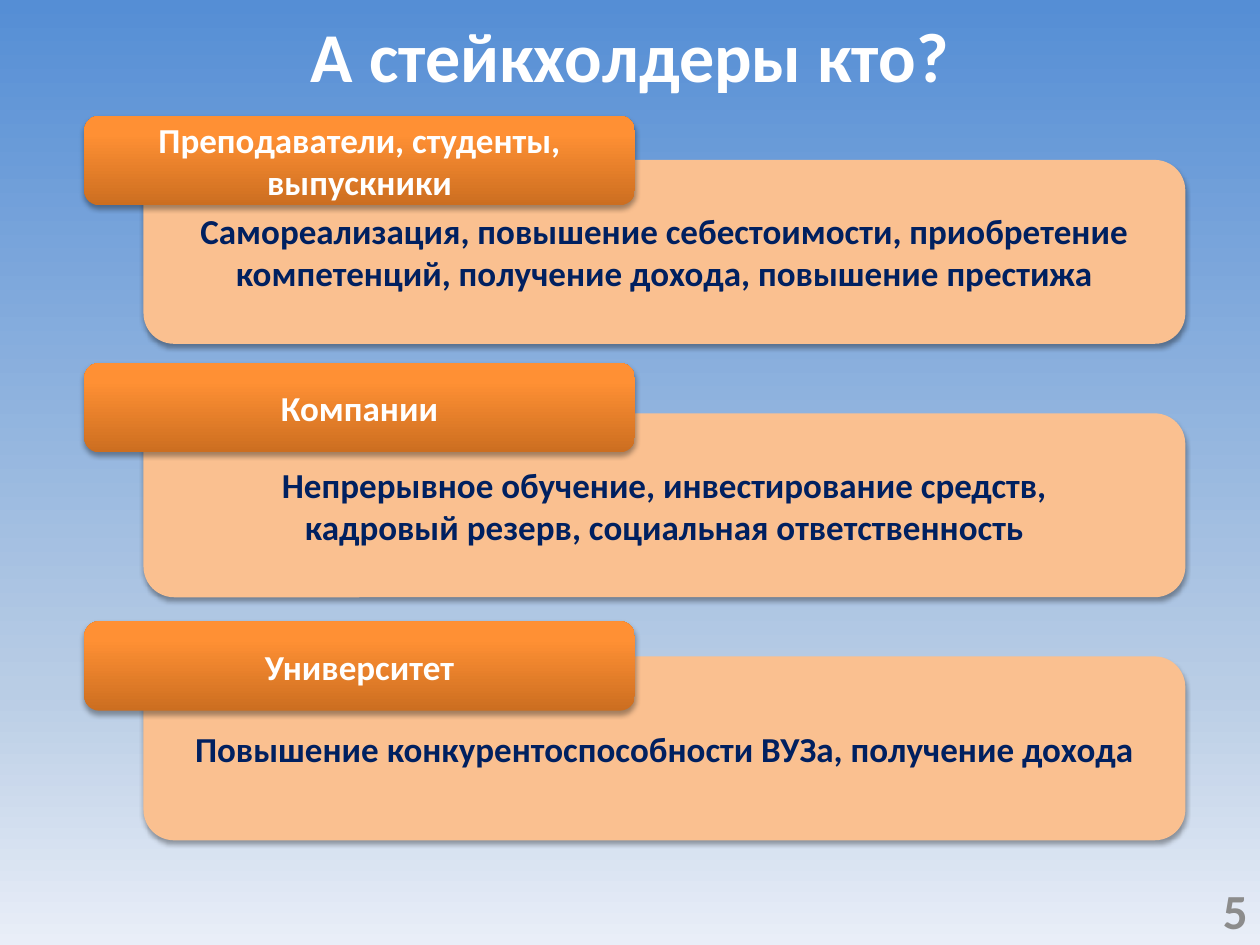
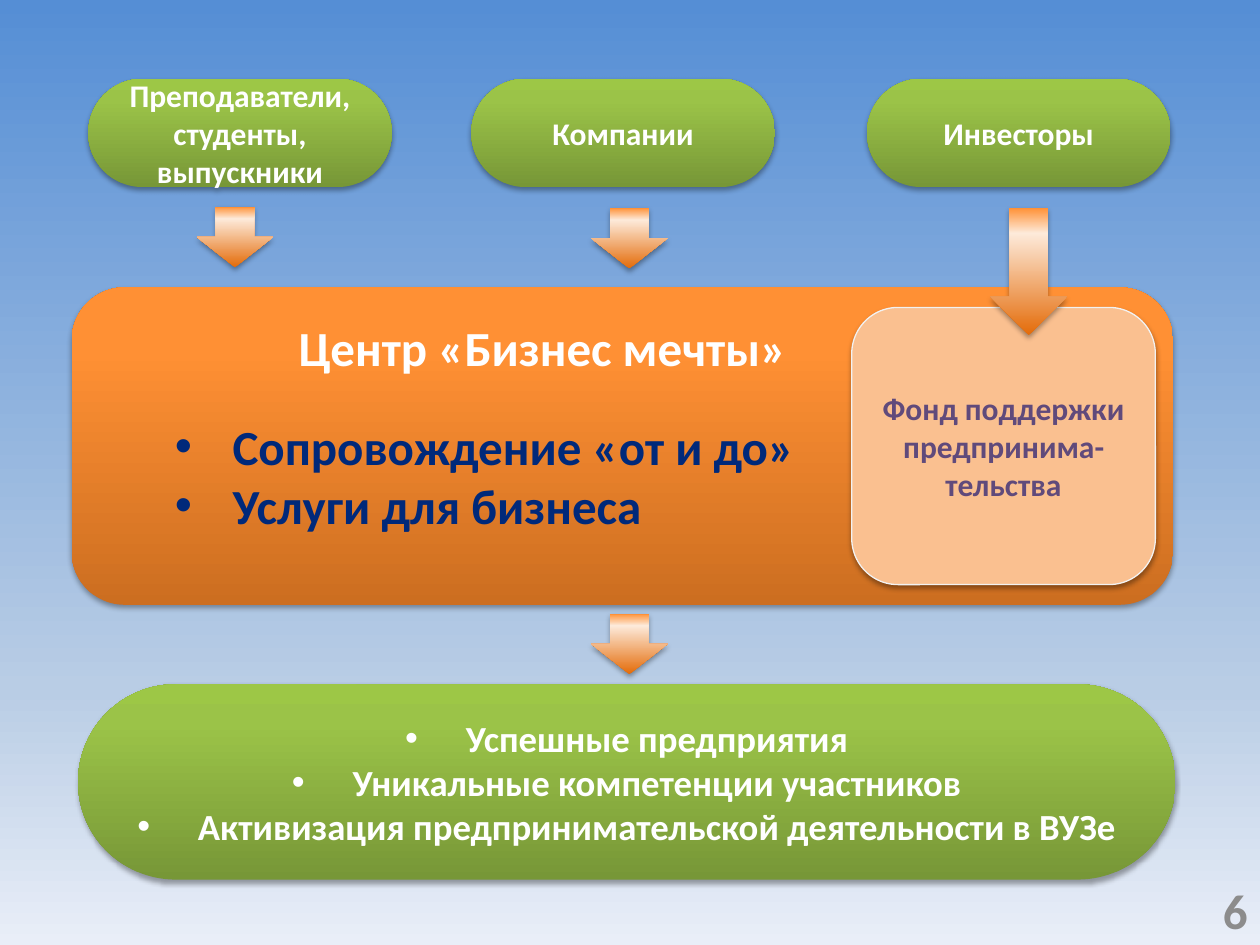
"""Builds two slides on the stakeholders of a business support centre."""
from lxml import etree
from pptx import Presentation
from pptx import util as u
from pptx.dml.color import RGBColor
from pptx.enum import shapes, text
from pptx.oxml.ns import qn

Pt = u.Pt
ROUND = shapes.MSO_SHAPE.ROUNDED_RECTANGLE
ARROW = shapes.MSO_SHAPE.DOWN_ARROW
LEFT, CENTER, RIGHT = text.PP_ALIGN.LEFT, text.PP_ALIGN.CENTER, text.PP_ALIGN.RIGHT
FONT = "Calibri"
COLORS = {"white": "FFFFFF", "peach": "FAC090", "navy": "002060", "blue": "00297A",
          "purple": "604A7B", "grey": "8C8C8C", "edge": "F2F2F2", "shadow": "000000"}
GRADIENTS = {
    "sky": [(0, "558ED5"), (73, "B9CDE5"), (100, "E9EEF8")],
    "orange": [(0, "CC6E20"), (80, "FF9034"), (100, "FF9136")],
    "green": [(0, "779737"), (80, "9BC348"), (100, "9DC746")],
    "arrow": [(0, "E46C0A"), (80, "FDEADA"), (100, "FF9136")],
}

TITLE = "А стейкхолдеры кто?"
STAKEHOLDERS = [
    ("Преподаватели, студенты, выпускники", 66.2, 91.4,
     "Самореализация, повышение себестоимости, приобретение компетенций, "
     "получение дохода, повышение престижа"),
    ("Компании", 207.4, 236.2,
     "Непрерывное обучение, инвестирование средств,\v"
     "кадровый резерв, социальная ответственность"),
    ("Университет", 355, 375.1, "Повышение конкурентоспособности ВУЗа, получение дохода"),
]
SOURCES = [("Преподаватели, студенты, выпускники", 50.4), ("Компании", 269.3), ("Инвесторы", 495.4)]
CENTRE = "Центр «Бизнес мечты»"
SERVICES = ["Сопровождение «от и до»", "Услуги для бизнеса"]
FUND = "Фонд поддержки предпринима-тельства"
RESULTS = ["Успешные предприятия", "Уникальные компетенции участников",
           "Активизация предпринимательской деятельности в ВУЗе"]
ARROWS = [(112.3, 118.1, 34.6), (337.7, 118.8, 34.6), (565.9, 118.8, 72.7), (337.7, 350.6, 34.6)]


def rgb(name):
    return RGBColor.from_string(COLORS[name])


def gradient(fill, owner, name, angle=90):
    fill.gradient()
    fill.gradient_angle = angle
    stops = next(owner.iter(qn("a:gsLst")))
    for gs in list(stops):
        stops.remove(gs)
    for pos, color in GRADIENTS[name]:
        gs = etree.SubElement(stops, qn("a:gs"), pos=str(pos * 1000))
        etree.SubElement(gs, qn("a:srgbClr"), val=color)


def drop_shadow(sp):
    sp.shadow.inherit = False
    effects = next(sp.element.iter(qn("a:effectLst")))
    shadow = etree.SubElement(effects, qn("a:outerShdw"), blurRad=str(Pt(3.1)),
                              dist=str(Pt(1.8)), dir="5400000", rotWithShape="0")
    color = etree.SubElement(shadow, qn("a:srgbClr"), val=COLORS["shadow"])
    etree.SubElement(color, qn("a:alpha"), val="35000")


def style(p, size, color, align=CENTER):
    p.alignment = align
    for r in p.runs:
        r.font.name, r.font.size, r.font.bold = FONT, Pt(size), True
        r.font.color.rgb = rgb(color)


def write(sp, lines, size, color, align=CENTER):
    tf = sp.text_frame
    tf.word_wrap = True
    tf.text = "\n".join(lines)
    for p in tf.paragraphs:
        style(p, size, color, align)
    return tf


def indent(p, margin, hang=0):
    pr = p._p.get_or_add_pPr()
    pr.set("marL", str(Pt(margin)))
    pr.set("indent", str(Pt(-hang)))
    if hang:
        etree.SubElement(pr, qn("a:buFont"), typeface="Arial")
        etree.SubElement(pr, qn("a:buChar"), char="•")


def add_box(s, kind, box, fill, pill=False):
    sp = s.shapes.add_shape(kind, *map(Pt, box))
    if fill in GRADIENTS:
        gradient(sp.fill, sp.element, fill)
    else:
        sp.fill.solid()
        sp.fill.fore_color.rgb = rgb(fill)
    sp.line.fill.background()
    drop_shadow(sp)
    if pill:
        sp.adjustments[0] = 0.5
    return sp


def add_label(s, box, line, size, color, align, anchor):
    sp = s.shapes.add_textbox(*map(Pt, box))
    write(sp, [line], size, color, align).vertical_anchor = anchor


def new_slide(prs):
    s = prs.slides.add_slide(prs.slide_layouts[6])
    gradient(s.background.fill, s.element, "sky", 270)
    return s


def add_number(s, number):
    add_label(s, (552.2, 505.4, 167.8, 28.8), str(number), 28, "grey", RIGHT,
              text.MSO_ANCHOR.MIDDLE)


def stakeholders_slide(prs):
    s = new_slide(prs)
    for name, tag_top, card_top, interests in STAKEHOLDERS:
        card = add_box(s, ROUND, (82, card_top, 595.4, 105.1), "peach")
        write(card, [interests], 20, "navy")
        tag = add_box(s, ROUND, (48.2, tag_top, 314.6, 51.1), "orange")
        write(tag, [name], 20, "white")
    add_label(s, (36, 3.6, 648, 90), TITLE, 40, "white", CENTER, text.MSO_ANCHOR.TOP)
    add_number(s, 5)


def centre_slide(prs):
    s = new_slide(prs)
    for name, left in SOURCES:
        source = add_box(s, ROUND, (left, 45, 173.5, 61.9), "green", pill=True)
        write(source, [name], 18, "white")

    centre = add_box(s, ROUND, (41, 164.2, 629.3, 181.4), "orange")
    tf = write(centre, [CENTRE] + SERVICES, 28, "blue", LEFT)
    tf.margin_bottom = Pt(26.8)
    heading, *services = tf.paragraphs
    style(heading, 28, "white", LEFT)
    indent(heading, 113.7)
    services[0].space_before = Pt(23)
    for p in services:
        indent(p, 76, 33)

    results = add_box(s, ROUND, (44.6, 391, 627.1, 111.6), "green", pill=True)
    for p in write(results, RESULTS, 21, "white").paragraphs:
        indent(p, 34.6, 34.6)

    fund = add_box(s, ROUND, (486.7, 175.7, 173.5, 158.4), "peach")
    fund.line.color.rgb = rgb("edge")
    fund.line.width = Pt(0.75)
    write(fund, [FUND], 18, "purple")

    for left, top, height in ARROWS:
        add_box(s, ARROW, (left, top, 43.9, height), "arrow")
    add_number(s, 6)


def main():
    prs = Presentation()
    prs.slide_width, prs.slide_height = Pt(720), Pt(540)
    stakeholders_slide(prs)
    centre_slide(prs)
    prs.save("out.pptx")


if __name__ == "__main__":
    main()
